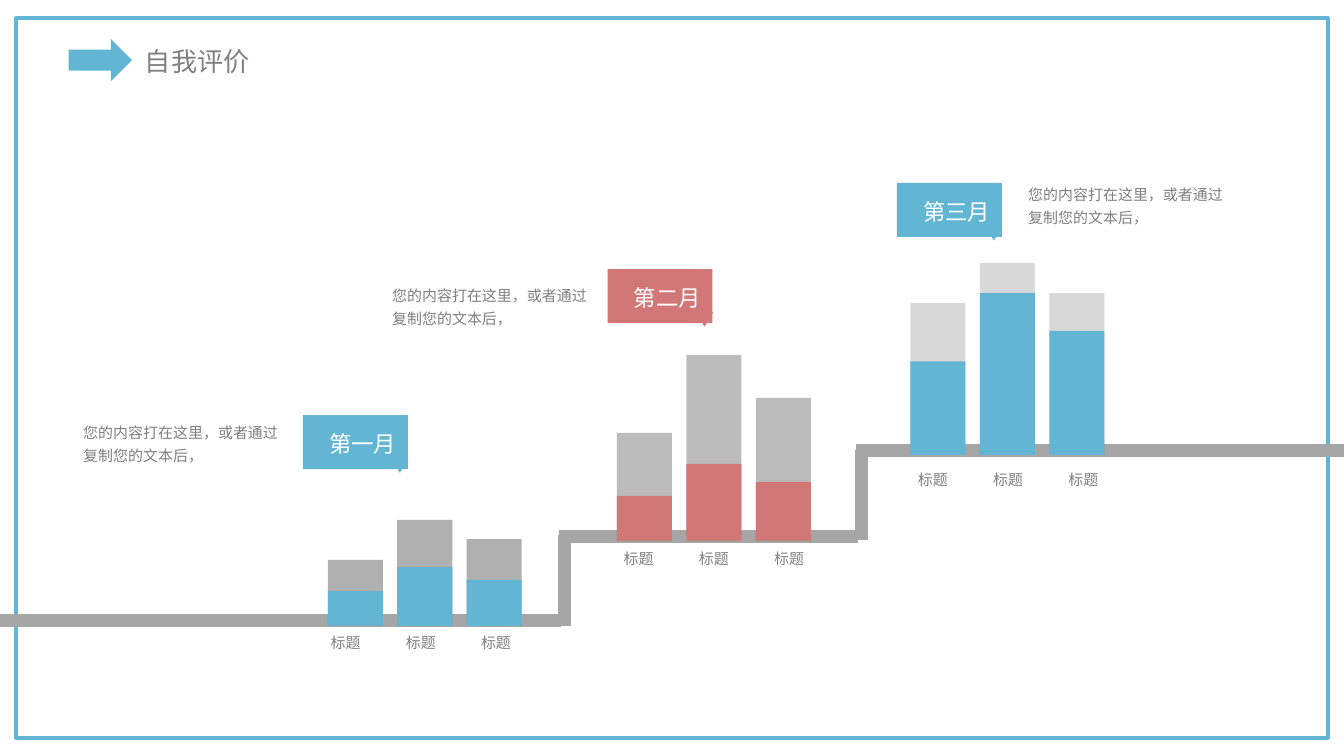
"""Build a self-evaluation slide with three months of bars climbing a staircase."""
from lxml import etree
from pptx import Presentation
from pptx.dml.color import RGBColor
from pptx.enum import shapes, text
from pptx.oxml import ns
from pptx.util import Pt

FONT = "Noto Sans CJK SC"
BLUE, RED, GREY, STEP, WHITE = "62B6D4", "D17777", "808080", "A6A6A6", "FFFFFF"
TITLE = "自我评价"
BODY = "您的内容打在这里，或者通过复制您的文本后，"
LABELS = ["标题", "标题", "标题"]
MONTHS = [
    dict(name="第一月", color=BLUE, opacity=62, bars=(175.6, 335.3),
         totals=(35.3, 56.7, 46.5), parts=(18.6, 31.5, 24.6),
         labels=(172.8, 337), callout=(162.3, 222.4), body=(39.6, 221)),
    dict(name="第二月", color=RED, opacity=52, bars=(330.5, 289.7),
         totals=(57.8, 99.5, 76.5), parts=(24, 41.1, 31.5),
         labels=(329.8, 292.3), callout=(325.5, 144.1), body=(205.1, 147.6)),
    dict(name="第三月", color=BLUE, opacity=30, bars=(487.7, 243.7),
         totals=(81.4, 102.8, 86.7), parts=(50, 86.7, 66.4),
         labels=(487.4, 249.8), callout=(480.5, 98), body=(545.8, 93.6)),
]
STAIRS = [
    (300.4, 332.6, 0, 332.6),
    (302.4, 335.5, 302.4, 286.6),
    (459.5, 287.2, 299.5, 287.2),
    (720, 241.2, 458.6, 241.2),
    (461.5, 289.5, 461.5, 241.2),
]
BAR_WIDTH, BAR_PITCH, LABEL_PITCH = 29.5, 37.2, 40.3

deck = Presentation()
deck.slide_width, deck.slide_height = Pt(720), Pt(405)
page = deck.slides.add_slide(deck.slide_layouts[6])


def rgb(value):
    """Turn a hex string into a colour."""
    return RGBColor.from_string(value)


def add_block(kind, left, top, width, height, fill, opacity=100):
    """Add a filled preset shape without an outline."""
    block = page.shapes.add_shape(kind, Pt(left), Pt(top), Pt(width), Pt(height))
    block.shadow.inherit = False
    block.fill.solid()
    block.fill.fore_color.rgb = rgb(fill)
    block.line.fill.background()
    if opacity < 100:
        color = block.fill._xPr.find(ns.qn("a:solidFill"))[0]
        etree.SubElement(color, ns.qn("a:alpha"), val=str(opacity * 1000))
    return block


def add_text(words, left, top, width, height, size, color=GREY,
             inset=(7.2, 3.6), wrap=False, spacing=None):
    """Add a text box holding one paragraph."""
    box = page.shapes.add_textbox(Pt(left), Pt(top), Pt(width), Pt(height))
    frame = box.text_frame
    frame.word_wrap = wrap
    frame.auto_size = text.MSO_AUTO_SIZE.SHAPE_TO_FIT_TEXT
    frame.margin_left = frame.margin_right = Pt(inset[0])
    frame.margin_top = frame.margin_bottom = Pt(inset[1])
    para = frame.paragraphs[0]
    para.text = words
    if spacing:
        para.line_spacing = spacing
    para.font.size = Pt(size)
    para.font.color.rgb = rgb(color)
    para.font.name = FONT
    style = para._p.pPr.find(ns.qn("a:defRPr"))
    etree.SubElement(style, ns.qn("a:ea"), typeface=FONT)


def add_stair(*ends):
    """Add one thick straight piece of the staircase."""
    stair = page.shapes.add_connector(shapes.MSO_CONNECTOR.STRAIGHT, *map(Pt, ends))
    stair.line.color.rgb = rgb(STEP)
    stair.line.width = Pt(7)
    etree.SubElement(stair._element.spPr, ns.qn("a:effectLst"))


def add_month(month):
    """Add the bars, labels, callout and body text of one month."""
    left, base = month["bars"]
    for heights, fill, opacity in ((month["totals"], GREY, month["opacity"]),
                                   (month["parts"], month["color"], 100)):
        for i, height in enumerate(heights):
            add_block(shapes.MSO_SHAPE.RECTANGLE, left + i * BAR_PITCH,
                      base - height, BAR_WIDTH, height, fill, opacity)
    left, top = month["labels"]
    for i, label in enumerate(LABELS):
        add_text(label, left + i * LABEL_PITCH, top, 25.2, 14.4, 8, inset=(4.3, 2.2))
    left, top = month["callout"]
    add_block(shapes.MSO_SHAPE.RECTANGLE, left, top, 56.2, 29, month["color"])
    pointer = add_block(shapes.MSO_SHAPE.ISOSCELES_TRIANGLE,
                        left + 47.2, top + 23, 9.4, 7.9, month["color"])
    pointer.rotation = 180
    add_text(month["name"], left + 7, top + 4.7, 54.7, 21.6, 12, WHITE, wrap=True)
    add_text(BODY, *month["body"], 115.9, 31, 8, inset=(5, 2.9), wrap=True, spacing=1.3)


border = add_block(shapes.MSO_SHAPE.RECTANGLE, 8.6, 9.8, 702.7, 385.5, WHITE)
border.line.color.rgb = rgb(BLUE)
border.line.width = Pt(2)
add_text(TITLE, 70.6, 20.9, 72, 24.5, 14)
add_block(shapes.MSO_SHAPE.RIGHT_ARROW, 36.7, 21, 34, 22.5, BLUE)
for ends in STAIRS:
    add_stair(*ends)
for month in MONTHS:
    add_month(month)

deck.save("out.pptx")
